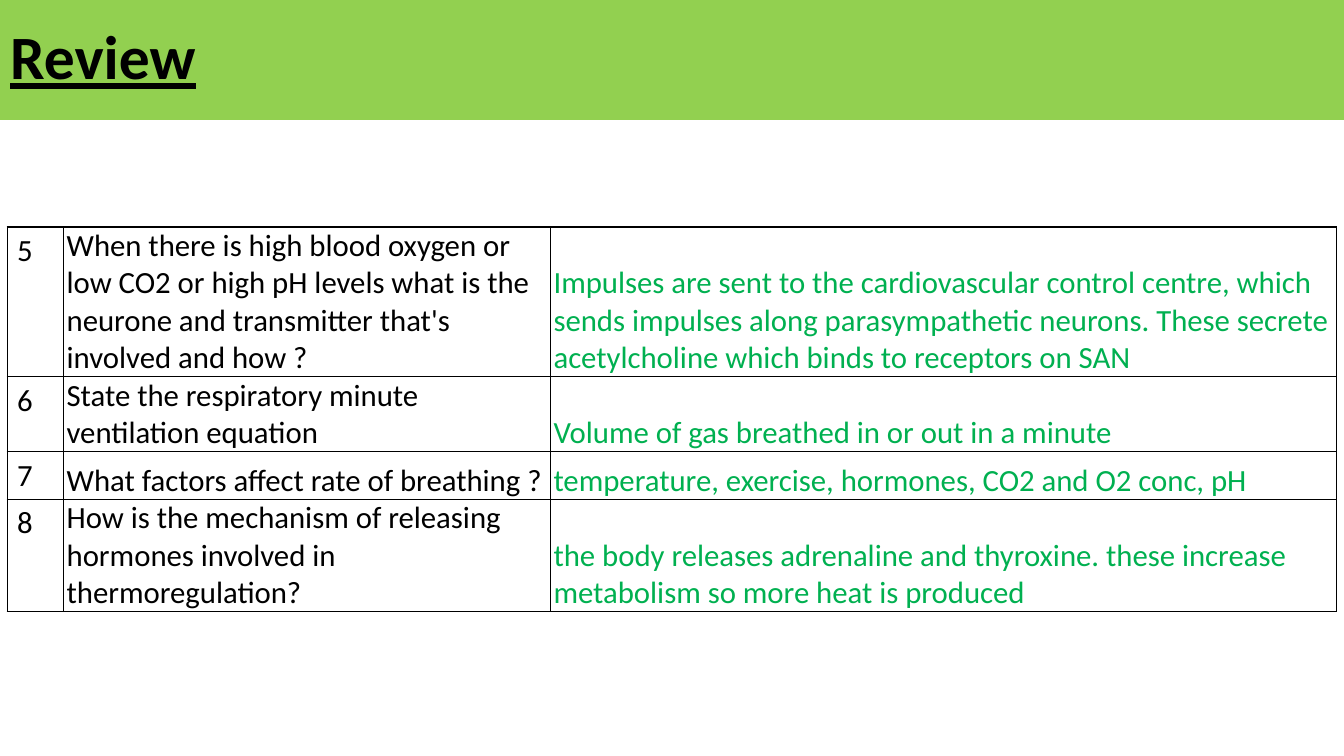
import pptx
import pptx.util
import pptx.dml.color
import pptx.enum.text
import pptx.oxml
import pptx.oxml.ns
from pptx.util import Cm

BLACK, LIME, GREEN = "000000", "92D050", "00B050"
ANCHOR = pptx.enum.text.MSO_ANCHOR
WIDTHS = (1.42, 12.27, 19.81)
ROW = 1.14
REVIEW = [
    ("5",
     "When there is high blood oxygen or low CO2 or high pH levels what is the "
     "neurone and transmitter that's involved and how ?",
     "Impulses are sent to the cardiovascular control centre, which sends "
     "impulses along parasympathetic neurons. These secrete acetylcholine "
     "which binds to receptors on SAN"),
    ("6",
     "State the respiratory minute ventilation equation",
     "Volume of gas breathed in or out in a minute"),
    ("7",
     "What factors affect rate of breathing ?",
     "temperature, exercise, hormones, CO2 and O2 conc, pH"),
    ("8",
     "How is the mechanism of releasing hormones involved in thermoregulation?",
     "the body releases adrenaline and thyroxine. these increase metabolism "
     "so more heat is produced"),
]


def paint(fill, color):
    fill.solid()
    fill.fore_color.rgb = pptx.dml.color.RGBColor.from_string(color)


def write(frame, text, size=22, color=BLACK, bold=False, line=False, space=None):
    """Fill a text frame with one formatted paragraph."""
    par = frame.paragraphs[0]
    par.alignment = pptx.enum.text.PP_ALIGN.LEFT
    par.line_spacing = space
    run = par.add_run()
    run.text = text
    font = run.font
    font.name, font.size = "Calibri", pptx.util.Pt(size)
    font.bold, font.underline = bold, line
    paint(font.fill, color)


def border(cell, color=BLACK, width=1):
    """Draw all four edges of a cell; call before the cell's fill is set."""
    props = cell._tc.get_or_add_tcPr()
    for side in ("lnL", "lnR", "lnT", "lnB"):
        props.append(pptx.oxml.parse_xml(
            f'<a:{side} {pptx.oxml.ns.nsdecls("a")} w="{pptx.util.Pt(width)}">'
            f'<a:solidFill><a:srgbClr val="{color}"/></a:solidFill></a:{side}>'))


def banner(slide, text):
    title = slide.shapes.title
    title.left, title.top = Cm(0), Cm(0)
    title.width, title.height = Cm(33.87), Cm(3.02)
    paint(title.fill, LIME)
    title.text_frame.vertical_anchor = ANCHOR.MIDDLE
    write(title.text_frame, text, size=44, bold=True, line=True, space=0.9)


def grid(slide, rows):
    frame = slide.shapes.add_table(
        len(rows), len(WIDTHS), Cm(0.18), Cm(5.72),
        Cm(sum(WIDTHS)), Cm(ROW * len(rows)))
    table = frame.table
    table.first_row = table.horz_banding = False
    for col, width in zip(table.columns, WIDTHS):
        col.width = Cm(width)
    for r, row in enumerate(rows):
        for c, text in enumerate(row):
            cell = table.cell(r, c)
            border(cell)
            cell.fill.background()
            if c > 0:
                cell.vertical_anchor = ANCHOR.BOTTOM
                cell.margin_left = cell.margin_right = Cm(0.08)
                cell.margin_top = cell.margin_bottom = Cm(0)
            write(cell.text_frame, text, color=GREEN if c == 2 else BLACK)


def main():
    deck = pptx.Presentation()
    deck.slide_width, deck.slide_height = Cm(33.87), Cm(19.05)
    slide = deck.slides.add_slide(deck.slide_layouts.get_by_name("Title Only"))
    banner(slide, "Review")
    grid(slide, REVIEW)
    deck.save("out.pptx")


if __name__ == "__main__":
    main()
